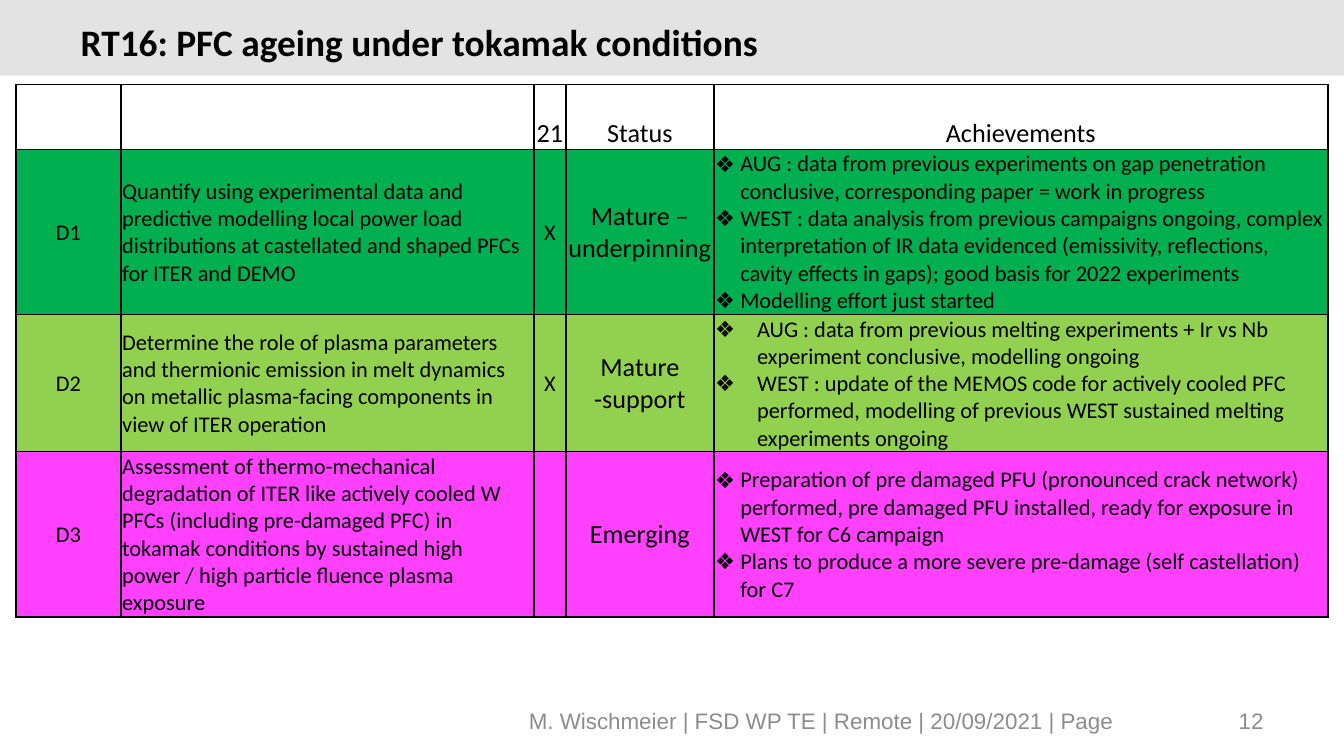
from dataclasses import dataclass

from lxml import etree
from pptx import Presentation
from pptx.dml.color import RGBColor
from pptx.enum import shapes, text
from pptx.oxml import ns
from pptx.util import Pt

ALIGN = text.PP_ALIGN
ANCHOR = text.MSO_ANCHOR


@dataclass(frozen=True)
class Theme:
    heading_font: str = "Calibri"
    footer_font: str = "Arial"
    ink: str = "000000"
    muted: str = "8C8C8C"
    band: str = "E3E3E3"
    mature: str = "00B050"
    support: str = "92D050"
    emerging: str = "FF40FF"
    title_size: float = 20
    label_size: float = 14
    body_size: float = 12
    bullet: str = "❖"


@dataclass(frozen=True)
class Deliverable:
    code: str
    goal: str
    planned: str
    status: str
    achievements: tuple
    colour: str
    indent: float = 13.5


class Deck:
    def __init__(self, theme, width, height):
        self.theme = theme
        self.presentation = Presentation()
        self.presentation.slide_width = Pt(width)
        self.presentation.slide_height = Pt(height)
        layout = self.presentation.slide_layouts[5]
        self.slide = self.presentation.slides.add_slide(layout)

    def add_words(self, paragraph, words, size, font, colour, bold=False):
        run = paragraph.add_run()
        run.text = words
        run.font.size = Pt(size)
        run.font.name = font
        run.font.bold = bold
        run.font.color.rgb = RGBColor.from_string(colour)

    def band(self, left, top, width, height):
        strip = self.slide.shapes.add_shape(
            shapes.MSO_SHAPE.RECTANGLE, Pt(left), Pt(top), Pt(width), Pt(height))
        strip.shadow.inherit = False
        strip.fill.solid()
        strip.fill.fore_color.rgb = RGBColor.from_string(self.theme.band)
        strip.line.fill.background()
        tree = self.slide.shapes._spTree
        tree.remove(strip._element)
        tree.insert(2, strip._element)

    def title(self, words, left, top, width, height):
        heading = self.slide.shapes.title
        heading.left, heading.top = Pt(left), Pt(top)
        heading.width, heading.height = Pt(width), Pt(height)
        frame = heading.text_frame
        frame.auto_size = text.MSO_AUTO_SIZE.NONE
        frame.vertical_anchor = ANCHOR.MIDDLE
        paragraph = frame.paragraphs[0]
        paragraph.alignment = ALIGN.LEFT
        paragraph.line_spacing = Pt(32)
        self.add_words(paragraph, words, self.theme.title_size,
                       self.theme.heading_font, self.theme.ink, bold=True)

    def footer(self, words, left, top, width, height, align):
        frame = self.slide.shapes.add_textbox(
            Pt(left), Pt(top), Pt(width), Pt(height)).text_frame
        frame.word_wrap = True
        frame.vertical_anchor = ANCHOR.MIDDLE
        frame.paragraphs[0].alignment = align
        self.add_words(frame.paragraphs[0], words, self.theme.body_size,
                       self.theme.footer_font, self.theme.muted)

    def table(self, left, top, widths, heights):
        frame = self.slide.shapes.add_table(
            len(heights), len(widths), Pt(left), Pt(top),
            Pt(sum(widths)), Pt(sum(heights)))
        grid = frame.table
        grid.first_row = grid.horz_banding = False
        for column, width in zip(grid.columns, widths):
            column.width = Pt(width)
        for row, height in zip(grid.rows, heights):
            row.height = Pt(height)
        return grid

    def border(self, cell):
        properties = cell._tc.get_or_add_tcPr()
        for side in ("lnL", "lnR", "lnT", "lnB"):
            edge = etree.SubElement(properties, ns.qn(f"a:{side}"), w=str(Pt(1)))
            paint = etree.SubElement(edge, ns.qn("a:solidFill"))
            etree.SubElement(paint, ns.qn("a:srgbClr"), val=self.theme.ink)

    def add_bullet(self, paragraph, indent):
        properties = paragraph._p.get_or_add_pPr()
        properties.set("marL", str(Pt(indent)))
        properties.set("indent", str(-Pt(indent)))
        etree.SubElement(properties, ns.qn("a:buFont"), typeface=self.theme.footer_font)
        etree.SubElement(properties, ns.qn("a:buChar"), char=self.theme.bullet)

    def cell(self, cell, entries, size, align=ALIGN.CENTER,
             anchor=ANCHOR.MIDDLE, colour=None, indent=None):
        self.border(cell)
        if colour:
            cell.fill.solid()
            cell.fill.fore_color.rgb = RGBColor.from_string(colour)
        else:
            cell.fill.background()
        cell.margin_left = cell.margin_right = cell.margin_top = Pt(0.7)
        cell.margin_bottom = Pt(0)
        cell.vertical_anchor = anchor
        frame = cell.text_frame
        for number, words in enumerate(entries):
            paragraph = frame.add_paragraph() if number else frame.paragraphs[0]
            paragraph.alignment = align
            if indent:
                self.add_bullet(paragraph, indent)
            if words:
                self.add_words(paragraph, words, size,
                               self.theme.heading_font, self.theme.ink)

    def deliverables(self, grid, headings, items):
        body, label = self.theme.body_size, self.theme.label_size
        for column, heading in enumerate(headings):
            self.cell(grid.cell(0, column), [heading], label, anchor=ANCHOR.BOTTOM)
        for row, item in enumerate(items, 1):
            columns = (
                ([item.code], body, ALIGN.CENTER, None),
                ([item.goal], body, ALIGN.LEFT, None),
                ([item.planned], body, ALIGN.CENTER, None),
                ([item.status], label, ALIGN.CENTER, None),
                (item.achievements, body, ALIGN.LEFT, item.indent),
            )
            for column, (entries, size, align, indent) in enumerate(columns):
                self.cell(grid.cell(row, column), entries, size, align,
                          colour=item.colour, indent=indent)


def main():
    theme = Theme()
    deck = Deck(theme, 720, 405)
    deck.band(0, 0, 720, 40.5)
    deck.title("RT16: PFC ageing under tokamak conditions", 36, 4.5, 594, 27)
    deck.footer("M. Wischmeier | FSD WP TE | Remote | 20/09/2021 | Page",
                244, 375, 392, 21.6, ALIGN.CENTER)
    deck.footer("12", 516, 375, 168, 21.6, ALIGN.RIGHT)

    items = (
        Deliverable(
            "D1",
            "Quantify using experimental data and predictive modelling local power load "
            "distributions at castellated and shaped PFCs for ITER and DEMO",
            "X", "Mature – underpinning",
            ("AUG : data from previous experiments on gap penetration conclusive, "
             "corresponding paper = work in progress",
             "WEST : data analysis from previous campaigns ongoing, complex interpretation "
             "of IR data evidenced (emissivity, reflections, cavity effects in gaps); "
             "good basis for 2022 experiments",
             "Modelling effort just started"),
            theme.mature),
        Deliverable(
            "D2",
            "Determine the role of plasma parameters and thermionic emission in melt "
            "dynamics on metallic plasma-facing components in view of ITER operation",
            "X", "Mature -support",
            ("AUG : data from previous melting experiments + Ir vs Nb experiment "
             "conclusive, modelling ongoing",
             "WEST : update of the MEMOS code for actively cooled PFC performed, "
             "modelling of previous WEST sustained melting experiments ongoing"),
            theme.support, indent=22.5),
        Deliverable(
            "D3",
            "Assessment of thermo-mechanical degradation of ITER like actively cooled W "
            "PFCs (including pre-damaged PFC) in tokamak conditions by sustained high "
            "power / high particle fluence plasma exposure",
            "", "Emerging",
            ("Preparation of pre damaged PFU (pronounced crack network) performed, "
             "pre damaged PFU installed, ready for exposure in WEST for C6 campaign",
             "Plans to produce a more severe pre-damage (self castellation) for C7"),
            theme.emerging),
    )
    grid = deck.table(8.6, 45.2, (56.2, 221.3, 17.1, 79.3, 329), (34.8, 88.5, 73.5, 88.5))
    deck.deliverables(grid, ("", "", "21", "Status", "Achievements"), items)
    deck.presentation.save("out.pptx")


if __name__ == "__main__":
    main()
